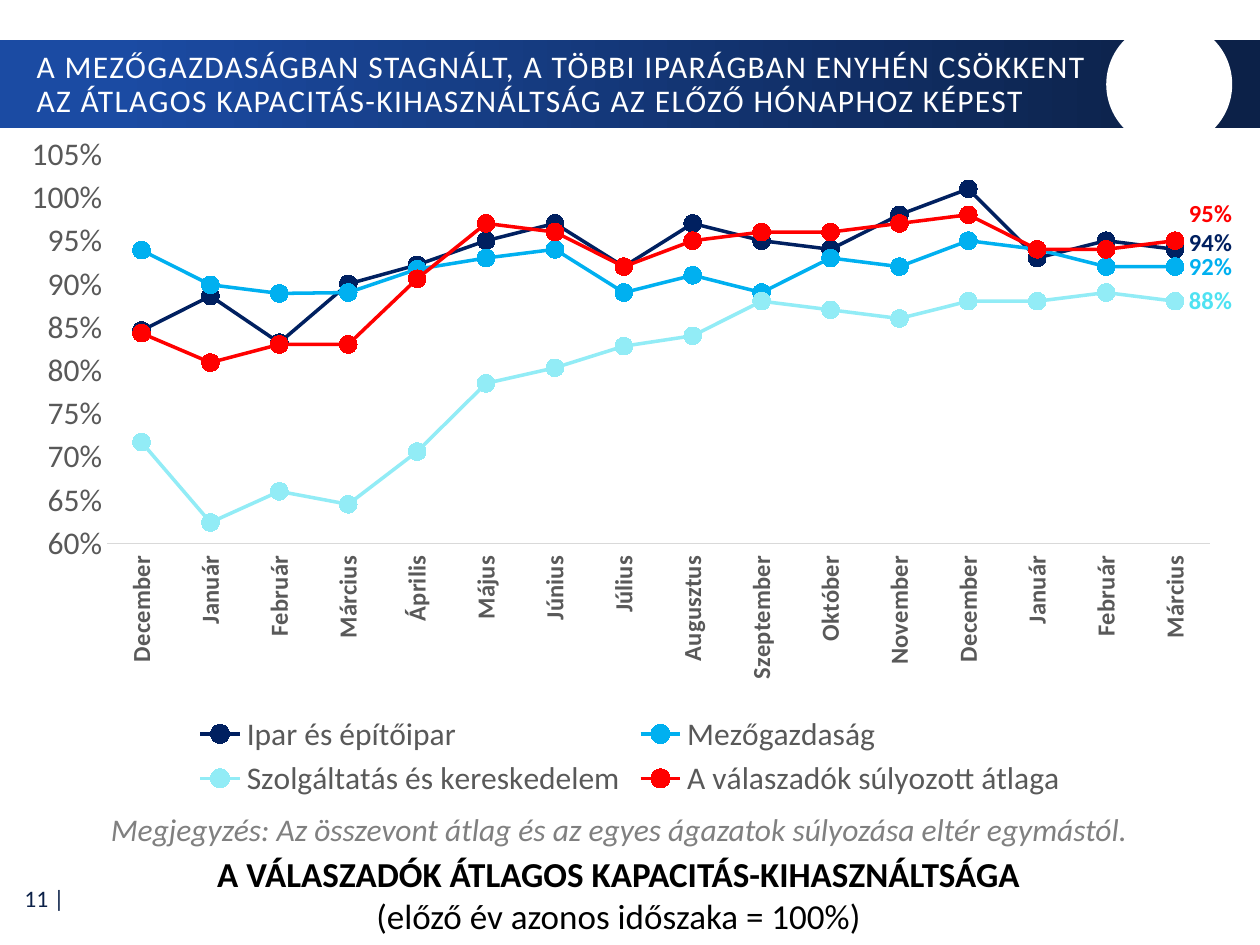
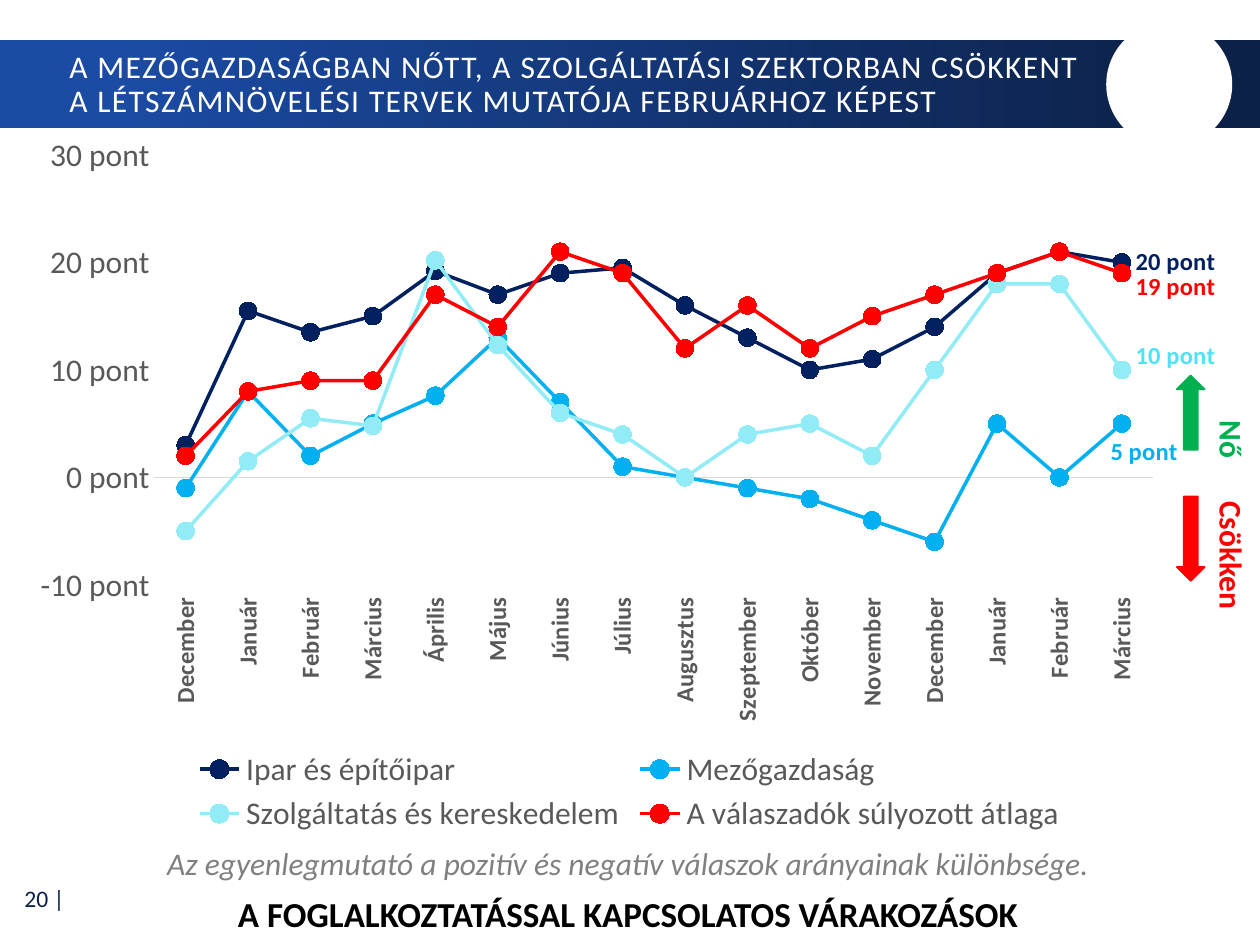
import pptx
import pptx.chart.data
import pptx.dml.color
import pptx.enum.chart
import pptx.enum.dml
import pptx.enum.shapes
import pptx.enum.text
import pptx.oxml
import pptx.oxml.ns
import pptx.util
from pptx.util import Inches

FONT = "Calibri"
COLORS = {
    "band_start": "1B4BA3", "navy": "0C2148", "white": "FFFFFF", "black": "000000",
    "note": "808080", "axis_text": "595959", "axis_line": "D9D9D9",
    "industry": "002060", "farming": "00B0F0", "services": "92ECF6",
    "services_label": "4FE2F2", "average": "FF0000", "up": "00B050", "down": "FF0000",
}
MONTHS = ["December", "Január", "Február", "Március", "Április", "Május", "Június", "Július",
          "Augusztus", "Szeptember", "Október", "November"]
CATEGORIES = MONTHS + MONTHS[:4]
# Series name, line colour, label colour
SECTORS = [
    ("Ipar és építőipar", "industry", "industry"),
    ("Mezőgazdaság", "farming", "farming"),
    ("Szolgáltatás és kereskedelem", "services", "services_label"),
    ("A válaszadók súlyozott átlaga", "average", "average"),
]

CAPACITY = {
    "box": (0, 1.01, 10, 5.37),
    "plot": (0.085, 0.04, 0.875, 0.575),
    "format": "0%",
    "scale": (0.6, 1.05, 0.05),
    "values": [
        [0.846, 0.886, 0.832, 0.9, 0.922, 0.95, 0.97, 0.92,
         0.97, 0.95, 0.94, 0.98, 1.01, 0.93, 0.95, 0.94],
        [0.939, 0.899, 0.889, 0.89, 0.917, 0.93, 0.94, 0.89,
         0.91, 0.89, 0.93, 0.92, 0.95, 0.94, 0.92, 0.92],
        [0.717, 0.624, 0.66, 0.645, 0.706, 0.785, 0.803, 0.828,
         0.84, 0.88, 0.87, 0.86, 0.88, 0.88, 0.89, 0.88],
        [0.843, 0.809, 0.83, 0.83, 0.906, 0.97, 0.96, 0.92,
         0.95, 0.96, 0.96, 0.97, 0.98, 0.94, 0.94, 0.95],
    ],
    "label_shifts": [(0, -0.01), (0, 0), (0, 0), (0, -0.04)],
}
STAFFING = {
    "box": (0.01, 1.01, 9.97, 5.65),
    "plot": (0.122, 0.039, 0.795, 0.604),
    "format": '0\\ "pont"',
    "scale": (-10, 30, 10),
    "values": [
        [3, 15.5, 13.5, 15, 19.2, 17, 19, 19.5, 16, 13, 10, 11, 14, 19, 21, 20],
        [-1, 8, 2, 5, 7.6, 13, 7, 1, 0, -1, -2, -4, -6, 5, 0, 5],
        [-5, 1.5, 5.5, 4.8, 20.2, 12.3, 6, 4, 0, 4, 5, 2, 10, 18, 18, 10],
        [2, 8, 9, 9, 17, 14, 21, 19, 12, 16, 12, 15, 17, 19, 21, 19],
    ],
    "label_shifts": [(0, 0), (-0.02, 0.04), (0, -0.02), (0, 0.02)],
}


def rgb(name):
    return pptx.dml.color.RGBColor.from_string(COLORS[name])


def style_font(font, size, color, bold=False, italic=False):
    font.name = FONT
    font.size = pptx.util.Pt(size)
    font.color.rgb = rgb(color)
    font.bold = bold
    font.italic = italic


def place(box):
    return [Inches(length) for length in box]


def add_filled(page, preset, box, color, outlined=False):
    shape = page.shapes.add_shape(preset, *place(box))
    shape.shadow.inherit = False
    shape.fill.solid()
    shape.fill.fore_color.rgb = rgb(color)
    if outlined:
        shape.line.color.rgb = rgb(color)
        shape.line.width = pptx.util.Pt(1)
    else:
        shape.line.fill.background()
    return shape


def add_text(page, box, lines, align=pptx.enum.text.PP_ALIGN.CENTER):
    """Each line is (text, size, colour, bold, italic, space after)."""
    frame = page.shapes.add_textbox(*place(box)).text_frame
    frame.word_wrap = True
    for index, (text, size, color, bold, italic, after) in enumerate(lines):
        para = frame.add_paragraph() if index else frame.paragraphs[0]
        para.text = text
        para.alignment = align
        para.space_after = pptx.util.Pt(after)
        style_font(para.font, size, color, bold, italic)
    return frame


def add_header(page, title_text, title_box):
    # Gradient band with a plain disc
    shapes = pptx.enum.shapes.MSO_SHAPE
    band = add_filled(page, shapes.RECTANGLE, (0, 0.32, 10, 0.7), "navy")
    band.fill.gradient()
    band.fill.gradient_angle = 0
    for stop, color, position in zip(band.fill.gradient_stops, ("band_start", "navy"), (0.09, 0.95)):
        stop.color.rgb = rgb(color)
        stop.position = position
    add_filled(page, shapes.OVAL, (8.78, 0.17, 1, 1), "white")

    # Title, brought in front of the band
    title = page.shapes.title
    title.element.getparent().append(title.element)
    title.left, title.top, title.width, title.height = place(title_box)
    frame = title.text_frame
    frame.word_wrap = True
    frame.auto_size = pptx.enum.text.MSO_AUTO_SIZE.NONE
    frame.vertical_anchor = pptx.enum.text.MSO_ANCHOR.MIDDLE
    frame.margin_right = Inches(0.25)
    para = frame.paragraphs[0]
    span = para.add_run()
    span.text = title_text
    span.font._element.set("spc", "80")
    para.alignment = pptx.enum.text.PP_ALIGN.LEFT
    para.line_spacing = 0.9
    style_font(para.font, 18, "white")


def add_page_number(page, number):
    frame = add_text(page, (0.01, 6.94, 0.6, 0.37),
                     [(f"{number} |", 13.5, "navy", False, False, 0)],
                     pptx.enum.text.PP_ALIGN.RIGHT)
    frame.vertical_anchor = pptx.enum.text.MSO_ANCHOR.MIDDLE


def manual_layout(x, y, width=None, height=None):
    parts = []
    if width is not None:
        parts = [("layoutTarget", "inner"), ("xMode", "edge"), ("yMode", "edge")]
    parts += [("x", x), ("y", y)]
    if width is not None:
        parts += [("w", width), ("h", height)]
    inner = "".join(f'<c:{tag} val="{value}"/>' for tag, value in parts)
    return pptx.oxml.parse_xml(
        f'<c:layout {pptx.oxml.ns.nsdecls("c")}><c:manualLayout>{inner}</c:manualLayout></c:layout>')


def style_axes(chart, scale, number_format):
    enums = pptx.enum.chart
    months, values = chart.category_axis, chart.value_axis
    for axis in (months, values):
        axis.major_tick_mark = axis.minor_tick_mark = enums.XL_TICK_MARK.NONE
        axis.has_major_gridlines = False
    style_font(months.tick_labels.font, 14, "axis_text", bold=True)
    months.tick_label_position = enums.XL_TICK_LABEL_POSITION.LOW
    months.format.line.color.rgb = rgb("axis_line")
    months.format.line.width = pptx.util.Pt(0.75)
    chart.element.xpath(".//c:catAx/c:txPr/a:bodyPr")[0].set("rot", "-5400000")

    style_font(values.tick_labels.font, 18, "axis_text")
    values.tick_labels.number_format = number_format
    values.tick_labels.number_format_is_linked = False
    values.format.line.fill.background()
    values.minimum_scale, values.maximum_scale, values.major_unit = scale


def style_series(series, color, label_color):
    series.smooth = False
    series.format.line.color.rgb = rgb(color)
    series.format.line.width = pptx.util.Pt(2)
    marker = series.marker
    marker.style = pptx.enum.chart.XL_MARKER_STYLE.CIRCLE
    marker.size = 10
    marker.format.fill.solid()
    marker.format.fill.fore_color.rgb = rgb(color)
    marker.format.line.color.rgb = rgb(color)
    # Only the latest month carries a label
    series.data_labels.show_value = False
    label = series.points[len(CATEGORIES) - 1].data_label
    style_font(label.font, 14, label_color, bold=True)
    label.position = pptx.enum.chart.XL_LABEL_POSITION.RIGHT


def add_line_chart(page, content):
    data = pptx.chart.data.CategoryChartData(number_format=content["format"])
    data.categories = CATEGORIES
    for (name, _, _), values in zip(SECTORS, content["values"]):
        data.add_series(name, values)
    chart = page.shapes.add_chart(pptx.enum.chart.XL_CHART_TYPE.LINE_MARKERS,
                                  *place(content["box"]), data).chart
    chart.has_title = False
    style_font(chart.font, 18, "black")
    chart.has_legend = True
    chart.legend.position = pptx.enum.chart.XL_LEGEND_POSITION.BOTTOM
    chart.legend.include_in_layout = False
    style_font(chart.legend.font, 18, "axis_text")
    style_axes(chart, content["scale"], content["format"])

    chart.plots[0].vary_by_categories = False
    for series, (_, color, label_color) in zip(chart.plots[0].series, SECTORS):
        style_series(series, color, label_color)

    # Plot area and label offsets
    area = chart.element.xpath(".//c:plotArea")[0]
    for layout in area.xpath("./c:layout"):
        area.remove(layout)
    area.insert(0, manual_layout(*content["plot"]))
    for label, shift in zip(chart.element.xpath(".//c:dLbl"), content["label_shifts"]):
        if any(shift):
            label.insert(1, manual_layout(*shift))


def add_direction_key(page, left, top):
    # Growth and decline arrows
    arrow = pptx.enum.shapes.MSO_SHAPE.UP_ARROW
    add_filled(page, arrow, (left, top, 0.22, 0.59), "up", outlined=True)
    decline = add_filled(page, arrow, (left, top + 0.96, 0.22, 0.67), "down", outlined=True)
    decline.rotation = 180

    # Both words in one vertical line, parted by a tab
    frame = page.shapes.add_textbox(*place((left + 0.14, top + 0.26, 0.5, 1.74))).text_frame
    frame.word_wrap = True
    frame._txBody.bodyPr.set("vert", "vert")
    para = frame.paragraphs[0]
    stops = pptx.oxml.parse_xml(
        f'<a:tabLst {pptx.oxml.ns.nsdecls("a")}><a:tab pos="{Inches(0.64)}" algn="l"/></a:tabLst>')
    para._p.get_or_add_pPr().append(stops)
    for text, color in (("Nő\t", "up"), ("Csökken", "down")):
        span = para.add_run()
        span.text = text
        style_font(span.font, 18, color, bold=True)


def add_chart_page(deck, number, title, title_box, content):
    page = deck.slides.add_slide(deck.slide_layouts[5])
    add_page_number(page, number)
    add_header(page, title, title_box)
    add_line_chart(page, content)
    return page


def main():
    deck = pptx.Presentation()
    deck.slide_width, deck.slide_height = Inches(10), Inches(7.5)

    # Capacity utilisation
    page = add_chart_page(
        deck, 11,
        "A MEZŐGAZDASÁGBAN STAGNÁLT, A TÖBBI IPARÁGBAN ENYHÉN CSÖKKENT "
        "AZ ÁTLAGOS KAPACITÁS-KIHASZNÁLTSÁG AZ ELŐZŐ HÓNAPHOZ KÉPEST",
        (0.19, 0.34, 8.85, 0.67), CAPACITY)
    add_text(page, (0.88, 6.72, 8.06, 0.77), [
        ("A VÁLASZADÓK ÁTLAGOS KAPACITÁS-KIHASZNÁLTSÁGA", 20, "black", True, False, 0),
        ("(előző év azonos időszaka = 100%)", 20, "black", False, False, 0)])
    add_text(page, (0.35, 6.38, 9.13, 0.4), [
        ("Megjegyzés: Az összevont átlag és az egyes ágazatok súlyozása eltér egymástól.",
         18, "note", False, True, 0)])

    # Staffing expectations
    page = add_chart_page(
        deck, 20,
        "A MEZŐGAZDASÁGBAN NŐTT, A SZOLGÁLTATÁSI SZEKTORBAN CSÖKKENT "
        "A LÉTSZÁMNÖVELÉSI TERVEK MUTATÓJA FEBRUÁRHOZ KÉPEST",
        (0.45, 0.34, 8.44, 0.67), STAFFING)
    add_text(page, (0.84, 6.65, 8.29, 0.82), [
        ("Az egyenlegmutató a pozitív és negatív válaszok arányainak különbsége.",
         18, "note", False, True, 6),
        ("A FOGLALKOZTATÁSSAL KAPCSOLATOS VÁRAKOZÁSOK", 20, "black", True, False, 0)])
    add_direction_key(page, 9.34, 2.98)

    deck.save("out.pptx")


if __name__ == "__main__":
    main()
